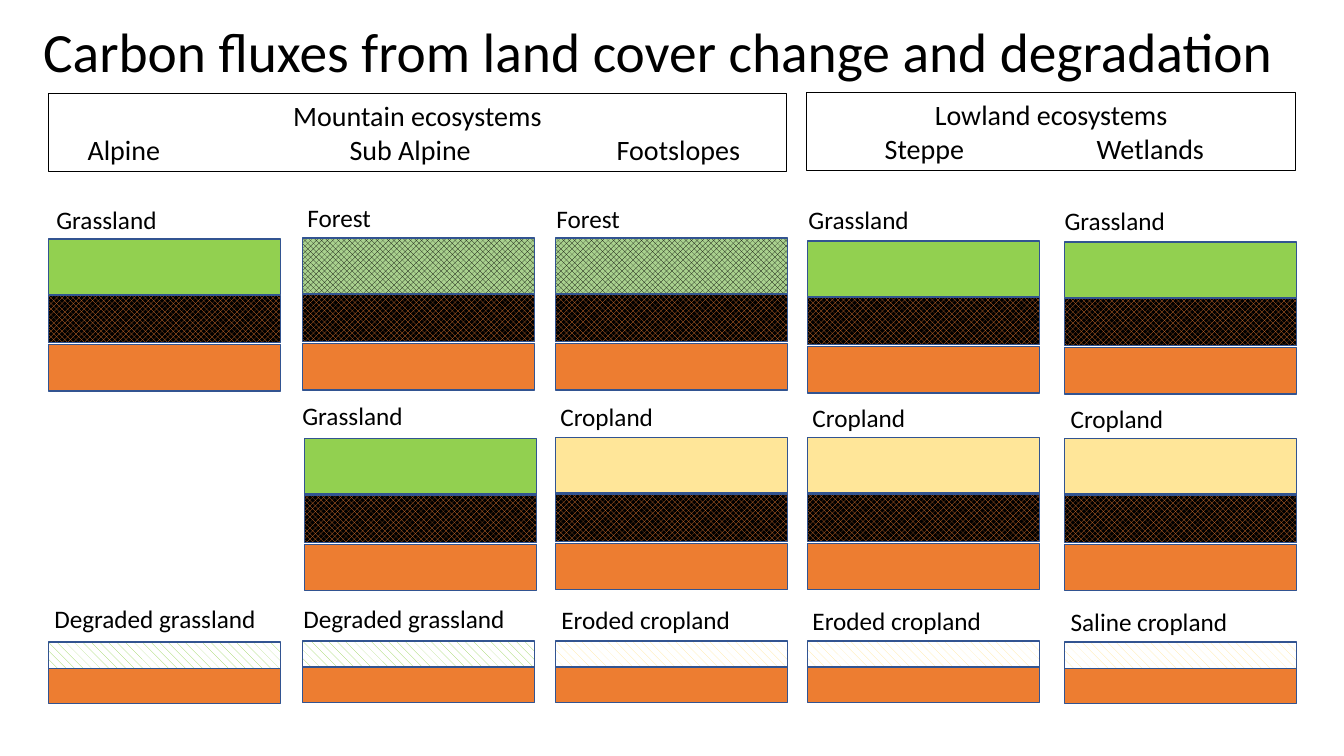
"""Build the slide on carbon fluxes from land cover change and degradation."""
from lxml.etree import SubElement
from pptx import Presentation
from pptx.dml.color import RGBColor
from pptx.enum.dml import MSO_PATTERN as Pattern
from pptx.enum.shapes import MSO_SHAPE as Shape
from pptx.enum.text import MSO_ANCHOR as Anchor, PP_ALIGN as Align
from pptx.oxml.ns import qn
from pptx.util import Inches, Pt

BLACK = RGBColor(0x00, 0x00, 0x00)
WHITE = RGBColor(0xFF, 0xFF, 0xFF)
OUTLINE = RGBColor(0x32, 0x54, 0x91)
GRASS = RGBColor(0x92, 0xD0, 0x50)
TREES = RGBColor(0xA9, 0xD1, 0x8E)
CROP = RGBColor(0xFF, 0xE6, 0x99)
SUBSOIL = RGBColor(0xED, 0x7D, 0x31)

CHECK = Pattern.LARGE_CHECKER_BOARD
DASHES = Pattern.DASHED_DOWNWARD_DIAGONAL
FOREST = (CHECK, BLACK, TREES)
TOPSOIL = (CHECK, SUBSOIL, BLACK)
BARE_GRASS = (DASHES, GRASS, WHITE)
BARE_CROP = (DASHES, CROP, WHITE)

LAYER_WIDTH = 2.3

prs = Presentation()
prs.slide_width, prs.slide_height = Inches(13.33), Inches(7.5)
slide = prs.slides.add_slide(prs.slide_layouts[6])


def write(frame, text, size=18, align=Align.LEFT, anchor=Anchor.TOP, spacing=1.0):
    """Fill a text frame, one paragraph per line of text."""
    frame.word_wrap = True
    frame.vertical_anchor = anchor
    frame.text = text
    for paragraph in frame.paragraphs:
        paragraph.alignment = align
        paragraph.line_spacing = spacing
        paragraph.font.size = Pt(size)
        paragraph.font.name = "Calibri"
        paragraph.font.color.rgb = BLACK


def add_box(left, top, width, height, fill=None, line=OUTLINE, weight=1):
    """Add a rectangle with a plain, patterned or empty fill."""
    box = slide.shapes.add_shape(
        Shape.RECTANGLE, Inches(left), Inches(top), Inches(width), Inches(height))
    box.shadow.inherit = False
    box.line.color.rgb = line
    box.line.width = Pt(weight)
    if fill is None:
        box.fill.background()
    elif isinstance(fill, RGBColor):
        box.fill.solid()
        box.fill.fore_color.rgb = fill
    else:
        box.fill.patterned()
        box.fill.pattern, box.fill.fore_color.rgb, box.fill.back_color.rgb = fill
    return box


title = slide.shapes.add_textbox(Inches(0.33), Inches(0.43), Inches(12.7), Inches(0.23))
write(title.text_frame, "Carbon fluxes from land cover change and degradation",
      size=39.6, anchor=Anchor.MIDDLE, spacing=0.9)

ecosystems = [
    (0.48, 0.93, 7.32, "Mountain ecosystems",
     [("Alpine", 0.65), ("Sub Alpine", 3.49), ("Footslopes", 6.15)]),
    (8, 0.92, 4.85, "Lowland ecosystems", [("Steppe", 1.07), ("Wetlands", 3.31)]),
]
for left, top, width, heading, zones in ecosystems:
    header = add_box(left, top, width, 0.77, line=BLACK, weight=0.75)
    zone_line = "".join(f"\t{zone}" for zone, _ in zones)
    write(header.text_frame, f"{heading}\n{zone_line}", size=20,
          align=Align.CENTER, anchor=Anchor.MIDDLE)
    zone_names = header.text_frame.paragraphs[1]
    zone_names.alignment = Align.LEFT
    tabs = SubElement(zone_names._p.pPr, qn("a:tabLst"))
    zone_names._p.pPr.insert_element_before(tabs, "a:defRPr", "a:extLst")
    for _, center in zones:
        SubElement(tabs, qn("a:tab"), pos=str(Inches(center)), algn="ctr")

intact = [(1.05, 0.46, SUBSOIL), (0.56, 0.47, TOPSOIL)]
degraded = [(0.23, 0.38, SUBSOIL)]

profiles = [
    ("Grassland", 0.46, 1.98, 0.48, 2.37, GRASS),
    ("Forest", 2.95, 1.96, 3, 2.36, FOREST),
    ("Forest", 5.42, 1.97, 5.51, 2.36, FOREST),
    ("Grassland", 7.92, 1.98, 8.01, 2.39, GRASS),
    ("Grassland", 10.46, 1.99, 10.56, 2.4, GRASS),
    ("Grassland", 2.9, 3.92, 3.02, 4.35, GRASS),
    ("Cropland", 5.46, 3.93, 5.51, 4.34, CROP),
    ("Cropland", 7.96, 3.94, 8.01, 4.34, CROP),
    ("Cropland", 10.52, 3.95, 10.56, 4.35, CROP),
    ("Degraded grassland", 0.44, 5.94, 0.48, 6.37, BARE_GRASS),
    ("Degraded grassland", 2.91, 5.94, 3, 6.36, BARE_GRASS),
    ("Eroded cropland", 5.47, 5.95, 5.51, 6.36, BARE_CROP),
    ("Eroded cropland", 7.96, 5.96, 8.01, 6.36, BARE_CROP),
    ("Saline cropland", 10.52, 5.97, 10.56, 6.37, BARE_CROP),
]
for land_cover, label_left, label_top, left, top, cover in profiles:
    is_bare = cover in (BARE_GRASS, BARE_CROP)
    for offset, height, fill in degraded if is_bare else intact:
        add_box(left, top + offset, LAYER_WIDTH, height, fill)
    add_box(left, top, LAYER_WIDTH, 0.26 if is_bare else 0.55, cover)
    label = slide.shapes.add_textbox(
        Inches(label_left), Inches(label_top), Inches(2.45), Inches(0.4))
    write(label.text_frame, land_cover)

prs.save("out.pptx")
